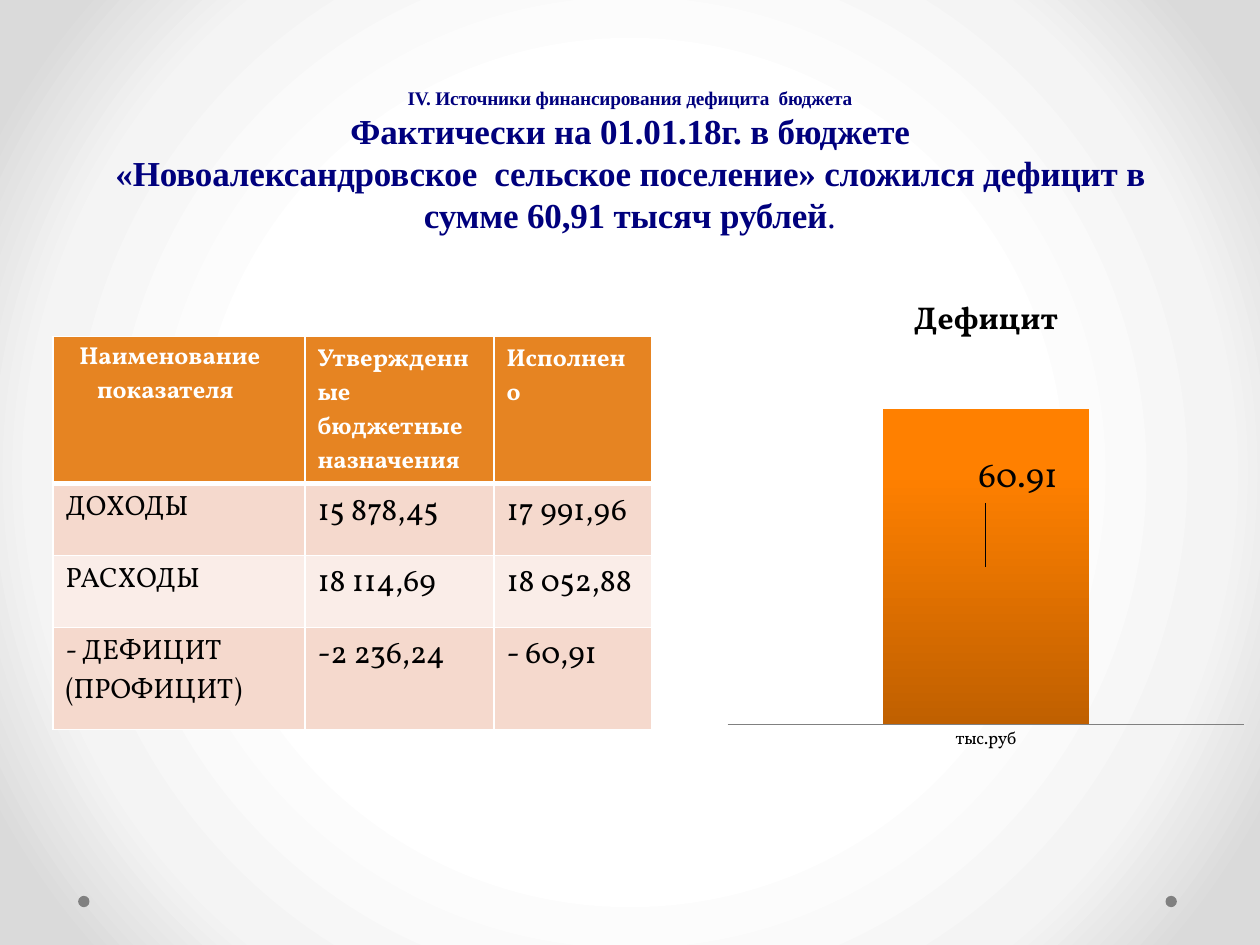
"""Builds the slide on how the budget deficit was financed."""
from lxml import etree
from pptx import Presentation, util as u
from pptx.chart import data
from pptx.dml.color import RGBColor
from pptx.enum import chart as ch, shapes, text
from pptx.oxml import parse_xml
from pptx.oxml.ns import nsdecls, qn

NAVY = RGBColor(0x00, 0x00, 0x7D)
WHITE = RGBColor(0xFF, 0xFF, 0xFF)
BLACK = RGBColor(0x00, 0x00, 0x00)
GRAY = RGBColor(0x80, 0x80, 0x80)
HEAD = RGBColor(0xE6, 0x84, 0x22)
ODD = RGBColor(0xF5, 0xD9, 0xCD)
EVEN = RGBColor(0xFA, 0xED, 0xE8)
BAR = (RGBColor(0xFF, 0x80, 0x00), RGBColor(0xC0, 0x60, 0x00))
BACK = ((50, "FFFFFF"), (76, "F4F4F4"), (92, "DADADA"))
SERIF, FACE = "Times New Roman", "Vollkorn"

TITLE = [
    [("IV. Источники финансирования дефицита  бюджета", 11, True)],
    [("Фактически на 01.01.18г. в бюджете", 20, True)],
    [("«Новоалександровское  сельское поселение» сложился дефицит в сумме "
      "60,91 тысяч рублей", 20, True), (".", 20, False)],
]
ROWS = [
    ("Наименование показателя", "Утвержденные  бюджетные назначения", "Исполнено"),
    ("ДОХОДЫ", "15 878,45", "17 991,96"),
    ("РАСХОДЫ", "18 114,69", "18 052,88"),
    ("- ДЕФИЦИТ  (ПРОФИЦИТ)", "-2 236,24", "- 60,91"),
]
WIDE = (2, 1.5, 1.25)
HIGH = (1.17, 0.57, 0.57, 0.81)
NAME, UNIT, SUM = "Дефицит", "тыс.руб", 60.91


def style(font, size, color, bold=False, face=FACE):
    font.size, font.bold, font.name = u.Pt(size), bold, face
    font.color.rgb = color


def box(*sizes):
    return [u.Inches(s) for s in sizes]


def paint(slide):
    stops = "".join(f'<a:gs pos="{p * 1000}"><a:srgbClr val="{c}"/></a:gs>'
                    for p, c in BACK)
    slide.background.fill.solid()
    prop = slide.element.cSld.find(qn("p:bg")).find(qn("p:bgPr"))
    prop.replace(prop[0], parse_xml(
        f'<a:gradFill {nsdecls("a")} rotWithShape="1"><a:gsLst>{stops}</a:gsLst>'
        '<a:path path="circle"><a:fillToRect l="50000" t="50000" r="50000" '
        'b="50000"/></a:path></a:gradFill>'))


def add_dots(slide):
    for left in (9.25, 0.62):
        dot = slide.shapes.add_shape(shapes.MSO_SHAPE.OVAL,
                                     *box(left, 7.11, 0.09, 0.09))
        dot.shadow.inherit = False
        dot.fill.solid()
        dot.fill.fore_color.rgb = GRAY
        dot.line.fill.background()


def add_title(slide):
    frame = slide.shapes.add_textbox(*box(0.5, 0, 9, 1.92)).text_frame
    frame.word_wrap = True
    frame.vertical_anchor = text.MSO_ANCHOR.BOTTOM
    for i, parts in enumerate(TITLE):
        para = frame.paragraphs[0] if i == 0 else frame.add_paragraph()
        para.alignment = text.PP_ALIGN.CENTER
        for words, size, bold in parts:
            run = para.add_run()
            run.text = words
            style(run.font, size, NAVY, bold, SERIF)
            run.font._element.set("spc", "-10")


def edge(cell, head):
    prop = cell._tc.get_or_add_tcPr()
    for i, side in enumerate(("lnL", "lnR", "lnT", "lnB")):
        width = u.Pt(3 if head and side == "lnB" else 1)
        prop.insert(i, parse_xml(
            f'<a:{side} {nsdecls("a")} w="{width}"><a:solidFill>'
            f'<a:srgbClr val="{WHITE}"/></a:solidFill></a:{side}>'))


def add_grid(slide):
    grid = slide.shapes.add_table(len(ROWS), len(WIDE), *box(
        0.42, 2.67, sum(WIDE), sum(HIGH))).table
    for col, wide in zip(grid.columns, WIDE):
        col.width = u.Inches(wide)
    for r, (row, high) in enumerate(zip(ROWS, HIGH)):
        grid.rows[r].height = u.Inches(high)
        head = r == 0
        for c, words in enumerate(row):
            cell = grid.cell(r, c)
            cell.fill.solid()
            cell.fill.fore_color.rgb = HEAD if head else ODD if r % 2 else EVEN
            edge(cell, head)
            cell.text_frame.text = words
            para = cell.text_frame.paragraphs[0]
            size = 14 if head else 18 if c else 16
            style(para.runs[0].font, size, WHITE if head else BLACK, head)
            if c == 0:
                cell.margin_left = cell.margin_right = cell.margin_bottom = 0
                cell.margin_top = u.Inches(0.04)
                para.space_before = u.Pt(2.8)
                left, first = (0.35, -0.14) if head else (0.1, 0)
                prop = para._p.get_or_add_pPr()
                prop.set("marL", str(u.Inches(left)))
                prop.set("indent", str(u.Inches(first)))


def layout(**vals):
    node = parse_xml(f'<c:layout {nsdecls("c")}><c:manualLayout/></c:layout>')
    for tag, val in vals.items():
        etree.SubElement(node[0], qn("c:" + tag)).set("val", str(val))
    return node


def add_bars(slide):
    info = data.CategoryChartData()
    info.categories = [UNIT]
    info.add_series(NAME, [SUM])
    chart = slide.shapes.add_chart(ch.XL_CHART_TYPE.COLUMN_CLUSTERED,
                                   *box(5.69, 2.17, 4.27, 3.89), info).chart
    style(chart.font, 10, BLACK)
    chart.has_legend = False
    chart.has_title = True
    chart.chart_title.text_frame.text = NAME
    style(chart.chart_title.text_frame.paragraphs[0].runs[0].font, 18, BLACK, True)
    axis = chart.value_axis
    axis.minimum_scale, axis.maximum_scale = 0, 70
    axis.has_major_gridlines = False
    axis.visible = False
    axis = chart.category_axis
    axis.major_tick_mark = ch.XL_TICK_MARK.NONE
    axis.format.line.color.rgb = GRAY
    plot = chart.plots[0]
    plot.gap_width = 150
    plot.vary_by_categories = False
    area = chart._chartSpace.chart.plotArea
    for old in area.findall(qn("c:layout")):
        area.remove(old)
    area.insert(0, layout(layoutTarget="inner", xMode="edge", yMode="edge",
                          x=0.02, y=0.18, w=0.96, h=0.74))
    bar = plot.series[0]
    fill = bar.format.fill
    fill.gradient()
    fill.gradient_angle = 270
    for stop, color, at in zip(fill.gradient_stops, BAR, (0.2, 1)):
        stop.color.rgb = color
        stop.position = at
    label = bar.points[0].data_label
    style(label.font, 20, BLACK)
    label.position = ch.XL_LABEL_POSITION.CENTER
    node = bar._element.find(".//" + qn("c:dLbl"))
    node.insert(1, layout(x=0.06, y=-0.18))


def main():
    deck = Presentation()
    deck.slide_width, deck.slide_height = box(10, 7.5)
    slide = deck.slides.add_slide(deck.slide_layouts[6])
    paint(slide)
    add_dots(slide)
    add_title(slide)
    add_grid(slide)
    add_bars(slide)
    deck.save("out.pptx")


if __name__ == "__main__":
    main()
